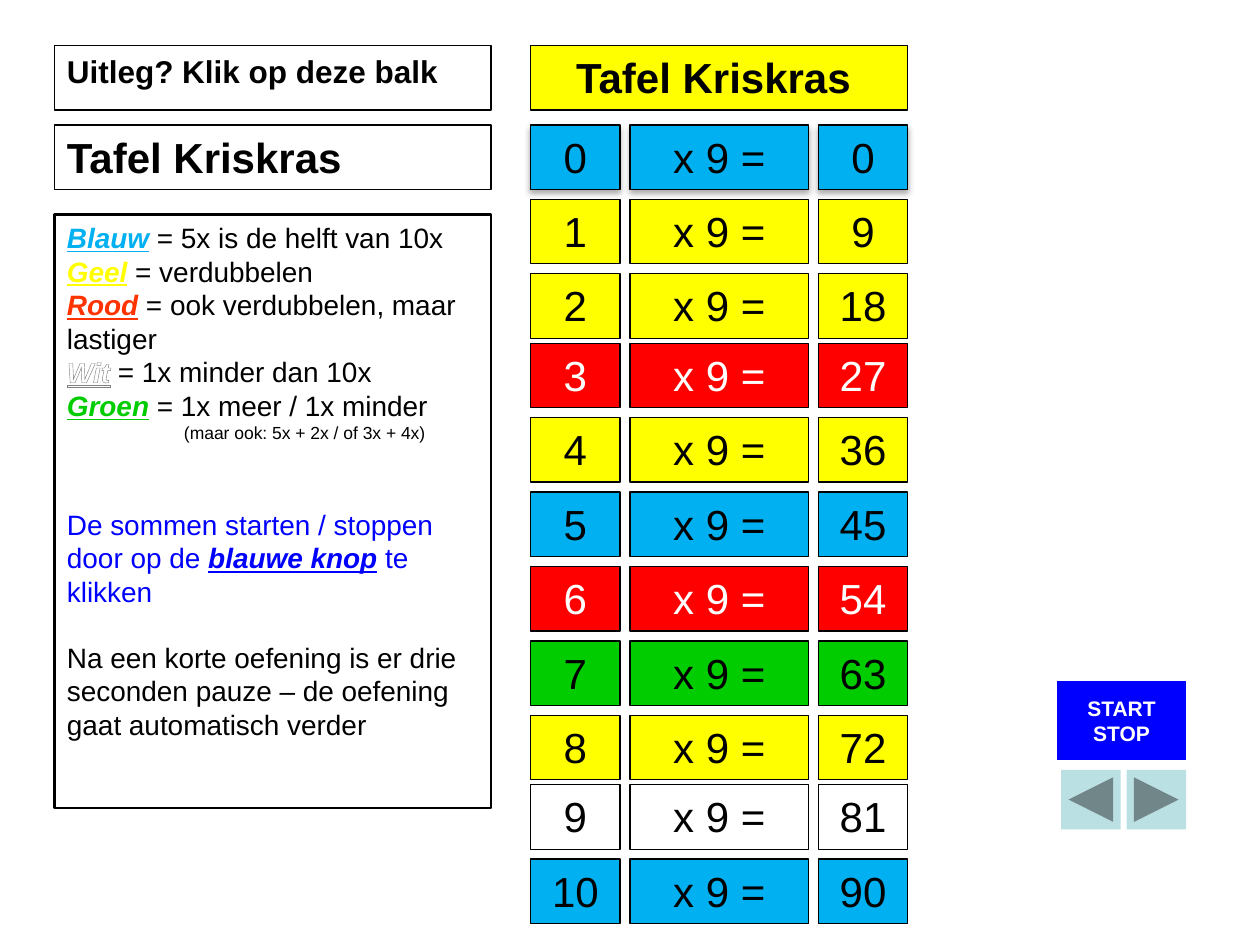
from lxml import etree
from pptx import Presentation
from pptx.dml.color import RGBColor
from pptx.enum import shapes, text
from pptx.oxml import ns
from pptx.util import Cm, Pt

BLACK = RGBColor(0x00, 0x00, 0x00)
WHITE = RGBColor(0xFF, 0xFF, 0xFF)
SKY = RGBColor(0x00, 0xB0, 0xF0)
YELLOW = RGBColor(0xFF, 0xFF, 0x00)
RED = RGBColor(0xFF, 0x00, 0x00)
ORANGE = RGBColor(0xFF, 0x33, 0x00)
GREEN = RGBColor(0x00, 0xCC, 0x00)
BLUE = RGBColor(0x00, 0x00, 0xFF)
PALE = RGBColor(0xBB, 0xE0, 0xE3)

LEFT, CENTER = text.PP_ALIGN.LEFT, text.PP_ALIGN.CENTER
KIND = shapes.MSO_SHAPE

presentation = Presentation()
presentation.slide_width = Cm(25.4)
presentation.slide_height = Cm(19.05)
slide = presentation.slides.add_slide(presentation.slide_layouts[6])


def add_box(left, top, width, height, fill, border=0.75, kind=KIND.RECTANGLE):
    box = slide.shapes.add_shape(kind, Cm(left), Cm(top), Cm(width), Cm(height))
    box.shadow.inherit = False
    if fill is None:
        box.fill.background()
    else:
        box.fill.solid()
        box.fill.fore_color.rgb = fill
    if border:
        box.line.color.rgb = BLACK
        box.line.width = Pt(border)
    else:
        box.line.fill.background()
    box.text_frame.word_wrap = True
    box.text_frame.vertical_anchor = text.MSO_ANCHOR.TOP
    box.text_frame.paragraphs[0].alignment = LEFT
    return box


def add_run(paragraph, words, size, color, bold=False, marked=False):
    run = paragraph.add_run()
    run.text = words
    run.font.name = "Arial"
    run.font.size = Pt(size)
    run.font.color.rgb = color
    run.font.bold = bold or marked
    run.font.italic = marked
    run.font.underline = marked
    return run


ROW_HEIGHT = 1.3
COLUMNS = [(10.7, 1.8), (12.7, 3.6), (16.5, 1.8)]
row_colors = [SKY, YELLOW, YELLOW, RED, YELLOW, SKY, RED, GREEN, YELLOW, WHITE, SKY]
row_top = 2.52
for factor, row_color in enumerate(row_colors):
    ink = WHITE if row_color == RED else BLACK
    sum_parts = [str(factor), "x 9 =", str(factor * 9)]
    for (left, width), part in zip(COLUMNS, sum_parts):
        cell = add_box(left, row_top, width, ROW_HEIGHT, row_color)
        cell.text_frame.paragraphs[0].alignment = CENTER
        add_run(cell.text_frame.paragraphs[0], part, 24, ink)
        if factor == 0:
            effects = cell._element.spPr.find(ns.qn("a:effectLst"))
            shadow = etree.SubElement(effects, ns.qn("a:outerShdw"), blurRad=str(Pt(3.5)),
                                      dist=str(Pt(2.2)), dir="5400000", rotWithShape="0")
            shade = etree.SubElement(shadow, ns.qn("a:srgbClr"), val="000000")
            etree.SubElement(shade, ns.qn("a:alpha"), val="32000")
    row_top += 1.4 if factor in (2, 8) else 1.5

headings = [
    ("Tafel Kriskras ", 10.7, 0.92, 7.6, 24, YELLOW, CENTER),
    ("Tafel Kriskras", 1.1, 2.52, 8.8, 24, None, LEFT),
    ("Uitleg? Klik op deze balk", 1.1, 0.92, 8.8, 18, None, LEFT),
]
for words, left, top, width, size, fill, alignment in headings:
    heading = add_box(left, top, width, ROW_HEIGHT, fill)
    heading.text_frame.paragraphs[0].alignment = alignment
    add_run(heading.text_frame.paragraphs[0], words, size, BLACK, bold=True)

explanation = add_box(1.1, 4.32, 8.8, 11.97, WHITE, 1.5).text_frame
strategies = [
    ("Blauw", SKY, " = 5x is de helft van 10x"),
    ("Geel", YELLOW, " = verdubbelen"),
    ("Rood", ORANGE, " = ook verdubbelen, maar lastiger"),
    ("Wit", WHITE, " = 1x minder dan 10x"),
    ("Groen", GREEN, " = 1x meer / 1x minder"),
]
for index, (color_name, color, strategy) in enumerate(strategies):
    line = explanation.add_paragraph() if index else explanation.paragraphs[0]
    line.alignment = LEFT
    name_run = add_run(line, color_name, 16, color, marked=True)
    add_run(line, strategy, 16, BLACK)
    if color == WHITE:
        outline = etree.Element(ns.qn("a:ln"), w=str(Pt(1)))
        outline_fill = etree.SubElement(outline, ns.qn("a:solidFill"))
        etree.SubElement(outline_fill, ns.qn("a:srgbClr"), val="808080")
        name_run.font._element.insert(0, outline)

alternative = explanation.add_paragraph()
alternative.alignment = LEFT
alternative._p.get_or_add_pPr().set("marL", str(Cm(2.36)))
add_run(alternative, "(maar ook: 5x + 2x / of 3x + 4x)", 10, BLACK)

instruction = explanation.add_paragraph()
instruction.alignment = LEFT
instruction.space_before = Pt(36.8)
add_run(instruction, "De sommen starten / stoppen door op de ", 16, BLUE)
add_run(instruction, "blauwe knop", 16, BLUE, marked=True)
add_run(instruction, " te klikken", 16, BLUE)

pause = explanation.add_paragraph()
pause.alignment = LEFT
pause.space_before = Pt(18.4)
add_run(pause, "Na een korte oefening is er drie seconden pauze – "
               "de oefening gaat automatisch verder", 16, BLACK)

add_box(22.71, 15.52, 1.2, 1.2, PALE, 0, KIND.ACTION_BUTTON_FORWARD_OR_NEXT)
add_box(21.39, 15.52, 1.2, 1.2, PALE, 0, KIND.ACTION_BUTTON_BACK_OR_PREVIOUS)

start_stop = add_box(21.31, 13.72, 2.6, 1.6, BLUE, 0, KIND.ACTION_BUTTON_CUSTOM).text_frame
start_stop.word_wrap = False
start_stop.vertical_anchor = text.MSO_ANCHOR.MIDDLE
start_stop.add_paragraph()
for line, word in zip(start_stop.paragraphs, ["START", "STOP"]):
    line.alignment = CENTER
    add_run(line, word, 12, WHITE, bold=True)

presentation.save("out.pptx")
